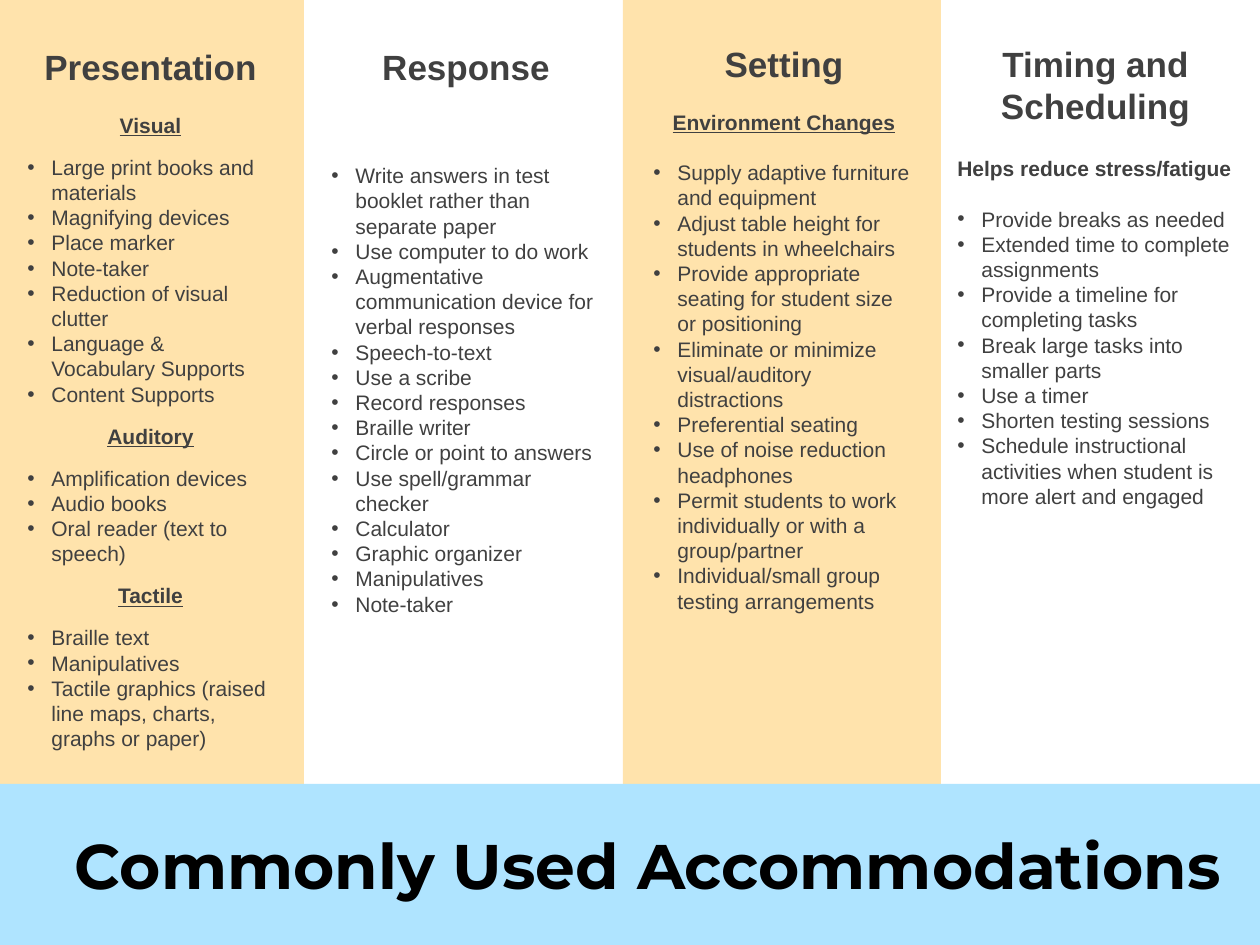
from lxml import etree
from pptx import Presentation
from pptx.dml.color import RGBColor
from pptx.enum.shapes import MSO_SHAPE
from pptx.enum.text import MSO_ANCHOR, MSO_AUTO_SIZE, PP_ALIGN
from pptx.oxml.ns import qn
from pptx.util import Emu, Pt

RECT = MSO_SHAPE.RECTANGLE
CENTER, LEFT = PP_ALIGN.CENTER, PP_ALIGN.LEFT
MIDDLE = MSO_ANCHOR.MIDDLE
GROW = MSO_AUTO_SIZE.SHAPE_TO_FIT_TEXT
COLORS = {"band": "FFB219", "foot": "AFE4FF", "text": "404040", "title": "000000"}
INDENT = 24
BANDS = [(0, 304), (623, 318)]

# Each column: box, heading, then (subhead, format, gap above, gap below, items).
UNDER = {"bold": True, "under": True, "align": CENTER}
COLUMNS = [
    ((15, 39, 271, 766), "Presentation", [
        ("Visual", UNDER, 14.4, 9.6, [
            "Large print books and materials", "Magnifying devices",
            "Place marker", "Note-taker", "Reduction of visual clutter",
            "Language & Vocabulary Supports", "Content Supports"]),
        ("Auditory", UNDER, 9.6, 9.6, [
            "Amplification devices", "Audio books",
            "Oral reader (text to speech)"]),
        ("Tactile", UNDER, 9.6, 9.6, [
            "Braille text", "Manipulatives",
            "Tactile graphics (raised line maps, charts, graphs or paper)"]),
    ]),
    ((319, 39, 294, 615), "Response", [
        (None, {}, 0, 43.2, [
            "Write answers in test booklet rather than separate paper",
            "Use computer to do work",
            "Augmentative communication device for verbal responses",
            "Speech-to-text", "Use a scribe", "Record responses",
            "Braille writer", "Circle or point to answers",
            "Use spell/grammar checker", "Calculator", "Graphic organizer",
            "Manipulatives", "Note-taker"]),
    ]),
    ((641, 36, 286, 619), "Setting", [
        ("Environment Changes", UNDER, 14.4, 14.4, [
            "Supply adaptive furniture and equipment",
            "Adjust table height for students in wheelchairs",
            "Provide appropriate seating for student size or positioning",
            "Eliminate or minimize visual/auditory distractions",
            "Preferential seating", "Use of noise reduction headphones",
            "Permit students to work individually or with a group/partner",
            "Individual/small group testing arrangements"]),
    ]),
    ((945, 36, 301, 484), "Timing and Scheduling", [
        ("Helps reduce stress/fatigue", {"bold": True}, 16.8, 14.4, [
            "Provide breaks as needed", "Extended time to complete assignments",
            "Provide a timeline for completing tasks",
            "Break large tasks into smaller parts", "Use a timer",
            "Shorten testing sessions",
            "Schedule instructional activities when student is more alert and engaged"]),
    ]),
]


def px(n):
    return Emu(round(n * 914400 / 126))


def write(frame, text, size=12, font="Arial", color="text", bold=False,
          under=False, align=LEFT, gap=0, bullet=False):
    """Fill the first paragraph if it is empty, else add one."""
    para = frame.paragraphs[0]
    if para.runs:
        para = frame.add_paragraph()
    para.alignment = align
    para.space_before = Pt(gap)
    run = para.add_run()
    run.text = text
    run.font.size = Pt(size)
    run.font.name = font
    run.font.bold = bold
    run.font.underline = under
    run.font.color.rgb = RGBColor.from_string(COLORS[color])
    if bullet:
        props = para._p.get_or_add_pPr()
        props.set("marL", str(px(INDENT)))
        props.set("indent", str(-px(INDENT)))
        etree.SubElement(props, qn("a:buFont")).set("typeface", "Arial")
        etree.SubElement(props, qn("a:buChar")).set("char", "•")


def add_rect(slide, box, color, alpha=None):
    rect = slide.shapes.add_shape(RECT, *map(px, box))
    rect.shadow.inherit = False
    rect.line.fill.background()
    rect.fill.solid()
    rect.fill.fore_color.rgb = RGBColor.from_string(COLORS[color])
    if alpha is not None:
        tint = rect._element.spPr.find(qn("a:solidFill"))[0]
        etree.SubElement(tint, qn("a:alpha")).set("val", str(alpha * 1000))
    return rect


def add_column(slide, box, head, groups):
    frame = slide.shapes.add_textbox(*map(px, box)).text_frame
    frame.word_wrap = True
    frame.auto_size = GROW
    write(frame, head, size=20, bold=True, align=CENTER)
    for sub, style, above, below, items in groups:
        if sub:
            write(frame, sub, gap=above, **style)
        for i, item in enumerate(items):
            write(frame, item, gap=0 if i else below, bullet=True)


def add_footer(slide):
    frame = add_rect(slide, (0, 784, 1260, 161), "foot").text_frame
    frame.word_wrap = True
    frame.vertical_anchor = MIDDLE
    frame.margin_left = px(48)
    write(frame, "Commonly Used Accommodations", size=36, font="Montserrat",
          color="title", bold=True, align=CENTER)


def main():
    deck = Presentation()
    deck.slide_width, deck.slide_height = px(1260), px(945)
    slide = deck.slides.add_slide(deck.slide_layouts[6])
    for left, width in BANDS:
        add_rect(slide, (left, 0, width, 804), "band", alpha=36)
    for column in COLUMNS:
        add_column(slide, *column)
    add_footer(slide)
    deck.save("out.pptx")


if __name__ == "__main__":
    main()
